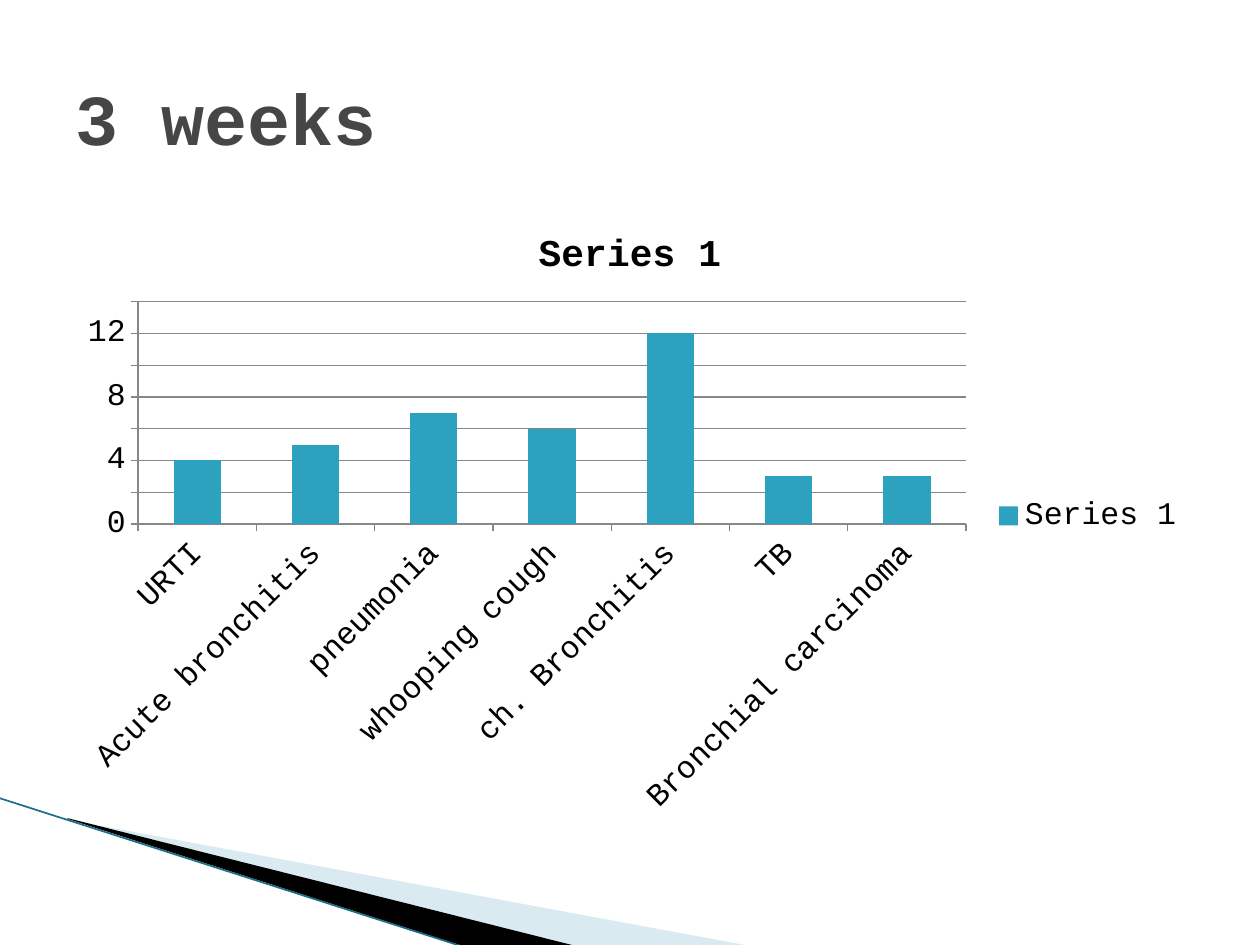
from dataclasses import dataclass

from lxml.etree import SubElement
from pptx import Presentation
from pptx.chart.data import CategoryChartData
from pptx.dml.color import RGBColor
from pptx.enum.chart import XL_CHART_TYPE, XL_LEGEND_POSITION, XL_TICK_MARK
from pptx.enum.text import MSO_ANCHOR, MSO_AUTO_SIZE, PP_ALIGN
from pptx.oxml.ns import qn
from pptx.util import Pt

EMU_PER_PX = 914400 / 126
TITLE_ONLY = 5


def px(length):
    return round(length * EMU_PER_PX)


@dataclass(frozen=True)
class Theme:
    font: str = "Courier New"
    heading: RGBColor = RGBColor(0x46, 0x46, 0x46)
    text: RGBColor = RGBColor(0, 0, 0)
    accent: RGBColor = RGBColor(0x2D, 0xA2, 0xBF)
    pale: RGBColor = RGBColor(0xA0, 0xCB, 0xDC)
    edge: RGBColor = RGBColor(0x1B, 0x6F, 0x85)
    grid: RGBColor = RGBColor(0x87, 0x87, 0x87)
    heading_size: float = 41
    chart_title_size: float = 21.6
    chart_size: float = 18
    edge_width: float = 0.95
    grid_width: float = 0.75


class SlideBuilder:
    def __init__(self, slide, theme):
        self.slide = slide
        self.theme = theme

    def style_font(self, font, size, color, bold=False):
        font.name = self.theme.font
        font.size = Pt(size)
        font.color.rgb = color
        font.bold = bold

    def title(self, text, left, top, width, height):
        heading = self.slide.shapes.title
        heading.left, heading.top = px(left), px(top)
        heading.width, heading.height = px(width), px(height)
        frame = heading.text_frame
        frame.word_wrap = True
        frame.auto_size = MSO_AUTO_SIZE.NONE
        frame.vertical_anchor = MSO_ANCHOR.MIDDLE
        paragraph = frame.paragraphs[0]
        paragraph.alignment = PP_ALIGN.LEFT
        run = paragraph.add_run()
        run.text = text
        self.style_font(run.font, self.theme.heading_size, self.theme.heading, True)

    def wedge(self, points, color, opacity=100):
        outline = self.slide.shapes.build_freeform(*points[0], scale=EMU_PER_PX)
        outline.add_line_segments(points[1:], close=True)
        wedge = outline.convert_to_shape()
        wedge.shadow.inherit = False
        wedge.fill.solid()
        wedge.fill.fore_color.rgb = color
        wedge.line.fill.background()
        if opacity < 100:
            rgb = wedge.fill._xPr.find(".//" + qn("a:srgbClr"))
            SubElement(rgb, qn("a:alpha"), val=str(opacity * 1000))

    def line(self, start, end):
        edge = self.slide.shapes.add_connector(1, *map(px, start + end))
        edge.line.color.rgb = self.theme.edge
        edge.line.width = Pt(self.theme.edge_width)
        SubElement(edge._element.spPr, qn("a:effectLst"))

    def style_axis_line(self, line):
        line.color.rgb = self.theme.grid
        line.width = Pt(self.theme.grid_width)

    def column_chart(self, series_name, counts, left, top, width, height):
        data = CategoryChartData()
        data.categories = list(counts)
        data.add_series(series_name, list(counts.values()))
        chart = self.slide.shapes.add_chart(
            XL_CHART_TYPE.COLUMN_CLUSTERED,
            *map(px, (left, top, width, height)), data).chart
        theme = self.theme
        self.style_font(chart.font, theme.chart_size, theme.text)

        chart.has_title = True
        title_run = chart.chart_title.text_frame.paragraphs[0].add_run()
        title_run.text = series_name
        self.style_font(title_run.font, theme.chart_title_size, theme.text, True)

        chart.has_legend = True
        chart.legend.position = XL_LEGEND_POSITION.RIGHT
        chart.legend.include_in_layout = False

        for axis in (chart.category_axis, chart.value_axis):
            axis.major_tick_mark = XL_TICK_MARK.OUTSIDE
            axis.minor_tick_mark = XL_TICK_MARK.NONE
            self.style_axis_line(axis.format.line)
            self.style_font(axis.tick_labels.font, theme.chart_size, theme.text)
        label_body = chart.category_axis._element.find(
            qn("c:txPr") + "/" + qn("a:bodyPr"))
        label_body.set("rot", str(-45 * 60000))

        values = chart.value_axis
        values.minimum_scale, values.maximum_scale, values.major_unit = 0, 14, 2
        values.has_major_gridlines = True
        self.style_axis_line(values.major_gridlines.format.line)

        plot = chart.plots[0]
        plot.gap_width = 150
        plot.vary_by_categories = False
        columns = plot.series[0].format.fill
        columns.solid()
        columns.fore_color.rgb = theme.accent


def main():
    presentation = Presentation()
    presentation.slide_width, presentation.slide_height = px(1260), px(945)
    slide = presentation.slides.add_slide(presentation.slide_layouts[TITLE_ONLY])
    theme = Theme()
    builder = SlideBuilder(slide, theme)

    builder.wedge([(69, 820), (750, 946), (575, 946), (69, 819)], theme.pale, 40)
    builder.wedge([(67, 818), (576, 946), (469, 948), (68, 819)], theme.text)
    builder.line((-1, 798), (467, 948))

    cough_causes = {
        "URTI": 4,
        "Acute bronchitis": 5,
        "pneumonia": 7,
        "whooping cough": 6,
        "ch. Bronchitis": 12,
        "TB": 3,
        "Bronchial carcinoma": 3,
    }
    builder.column_chart("Series 1", cough_causes, 63, 204, 1134, 624)
    builder.title("3 weeks", 63, 38, 1134, 158)
    presentation.save("out.pptx")


if __name__ == "__main__":
    main()
